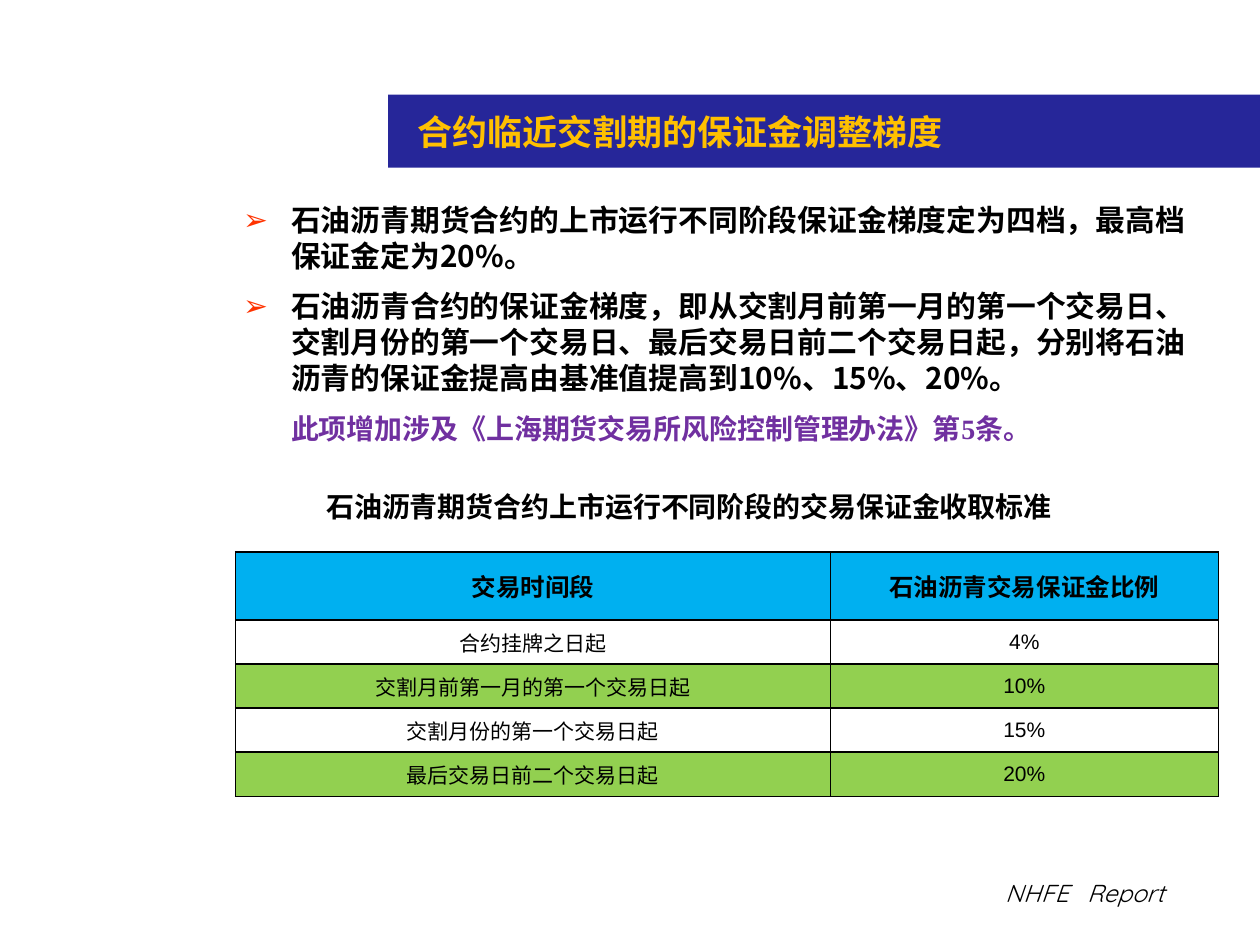
from lxml import etree
from pptx import Presentation
from pptx.dml.color import RGBColor
from pptx.enum.text import MSO_ANCHOR, MSO_AUTO_SIZE, PP_ALIGN
from pptx.oxml.ns import qn
from pptx.util import Inches, Pt

LEFT, CENTER = PP_ALIGN.LEFT, PP_ALIGN.CENTER
MIDDLE, TOP = MSO_ANCHOR.MIDDLE, MSO_ANCHOR.TOP
NO_FIT = MSO_AUTO_SIZE.NONE
CJK, SERIF, SANS = "Noto Sans CJK SC", "Times New Roman", "Arial"

# Content
TITLE = "合约临近交割期的保证金调整梯度"
BULLETS = [
    "石油沥青期货合约的上市运行不同阶段保证金梯度定为四档，最高档保证金定为20%。",
    "石油沥青合约的保证金梯度，即从交割月前第一月的第一个交易日、交割月份的第一个交易日、"
    "最后交易日前二个交易日起，分别将石油沥青的保证金提高由基准值提高到10%、15%、20%。",
]
NOTE = "此项增加涉及《上海期货交易所风险控制管理办法》第5条。"
CAPTION = "石油沥青期货合约上市运行不同阶段的交易保证金收取标准"
TABLE = [
    ("交易时间段", "石油沥青交易保证金比例"),
    ("合约挂牌之日起", "4%"),
    ("交割月前第一月的第一个交易日起", "10%"),
    ("交割月份的第一个交易日起", "15%"),
    ("最后交易日前二个交易日起", "20%"),
]
COLS = [4.72, 3.08]
ROWS = [0.54] + [0.35] * 4
FOOTER = "NHFE\tReport"


def rgb(value):
    return RGBColor.from_string(value)


def add(parent, tag, **attrs):
    return etree.SubElement(parent, qn(tag), attrs)


def write(p, text, size, font=CJK, color="000000", bold=False, italic=False,
          align=LEFT, before=0, line=None):
    p.alignment = align
    p.space_before = Pt(before)
    if line:
        p.line_spacing = Pt(line)
    r = p.add_run()
    r.text = text
    f = r.font
    f.size, f.name, f.bold, f.italic = Pt(size), font, bold, italic
    f.color.rgb = rgb(color)
    add(r._r.get_or_add_rPr(), "a:ea", typeface=CJK)


def place(sp, x, y, w, h, anchor=TOP, inset=0.1):
    sp.left, sp.top, sp.width, sp.height = (Inches(v) for v in (x, y, w, h))
    tf = sp.text_frame
    tf.word_wrap, tf.auto_size, tf.vertical_anchor = True, NO_FIT, anchor
    tf.margin_left = Inches(inset)
    return tf


def set_bullet(p, indent, char=None):
    pPr = p._p.get_or_add_pPr()
    pPr.set("marL", str(Inches(indent)))
    pPr.set("indent", str(-Inches(indent) if char else 0))
    if char:
        add(add(pPr, "a:buClr"), "a:srgbClr", val="FF3300")
        add(pPr, "a:buFont", typeface=SANS)
        add(pPr, "a:buChar", char=char)
    else:
        add(pPr, "a:buNone")


def set_borders(cell, color="000000", width=1):
    tcPr = cell._tc.get_or_add_tcPr()
    for i, side in enumerate(("a:lnL", "a:lnR", "a:lnT", "a:lnB")):
        ln = etree.Element(qn(side), w=str(Pt(width)))
        add(add(ln, "a:solidFill"), "a:srgbClr", val=color)
        tcPr.insert(i, ln)


prs = Presentation()
prs.slide_width, prs.slide_height = Inches(10), Inches(7.5)
slide = prs.slides.add_slide(prs.slide_layouts[1])
title, body = slide.placeholders

# Title band
tf = place(title, 3.08, 0.75, 6.92, 0.58, MIDDLE, inset=0.23)
title.fill.solid()
title.fill.fore_color.rgb = rgb("262699")
write(tf.paragraphs[0], TITLE, 20, SERIF, "FFC000", bold=True)

# Bulleted rules and the note below them
tf = place(body, 1.83, 1.55, 7.88, 2.14)
for i, text in enumerate(BULLETS):
    p = tf.add_paragraph() if i else tf.paragraphs[0]
    set_bullet(p, 0.38, "➢")
    write(p, text, 17, bold=True, before=8 if i else 0, line=20.6)
p = tf.add_paragraph()
set_bullet(p, 0.38)
write(p, NOTE, 16, SERIF, "7030A0", bold=True, before=8, line=20)

# Table caption
sp = slide.shapes.add_textbox(0, 0, 0, 0)
tf = place(sp, 2.15, 3.83, 6.93, 0.37, MIDDLE, inset=0.44)
write(tf.paragraphs[0], CAPTION, 16, bold=True)

# Margin table
table = slide.shapes.add_table(
    len(ROWS), len(COLS), Inches(1.87), Inches(4.38),
    Inches(sum(COLS)), Inches(sum(ROWS))).table
for col, w in zip(table.columns, COLS):
    col.width = Inches(w)
for i, (row, h) in enumerate(zip(table.rows, ROWS)):
    row.height = Inches(h)
    fill = "00B0F0" if i == 0 else ("92D050", "FFFFFF")[i % 2]
    for j, cell in enumerate(row.cells):
        cell.fill.solid()
        cell.fill.fore_color.rgb = rgb(fill)
        cell.vertical_anchor = MIDDLE
        set_borders(cell)
        write(cell.text_frame.paragraphs[0], TABLE[i][j], 12 if i else 14,
              SANS if i and j else SERIF, bold=i == 0, align=CENTER)

# Footer
sp = slide.shapes.add_textbox(0, 0, 0, 0)
p = place(sp, 7.88, 6.92, 2, 0.33).paragraphs[0]
tabs = add(p._p.get_or_add_pPr(), "a:tabLst")
add(tabs, "a:tab", pos=str(Inches(0.65)), algn="l")
write(p, FOOTER, 14, "Quicksand", italic=True)

prs.save("out.pptx")
